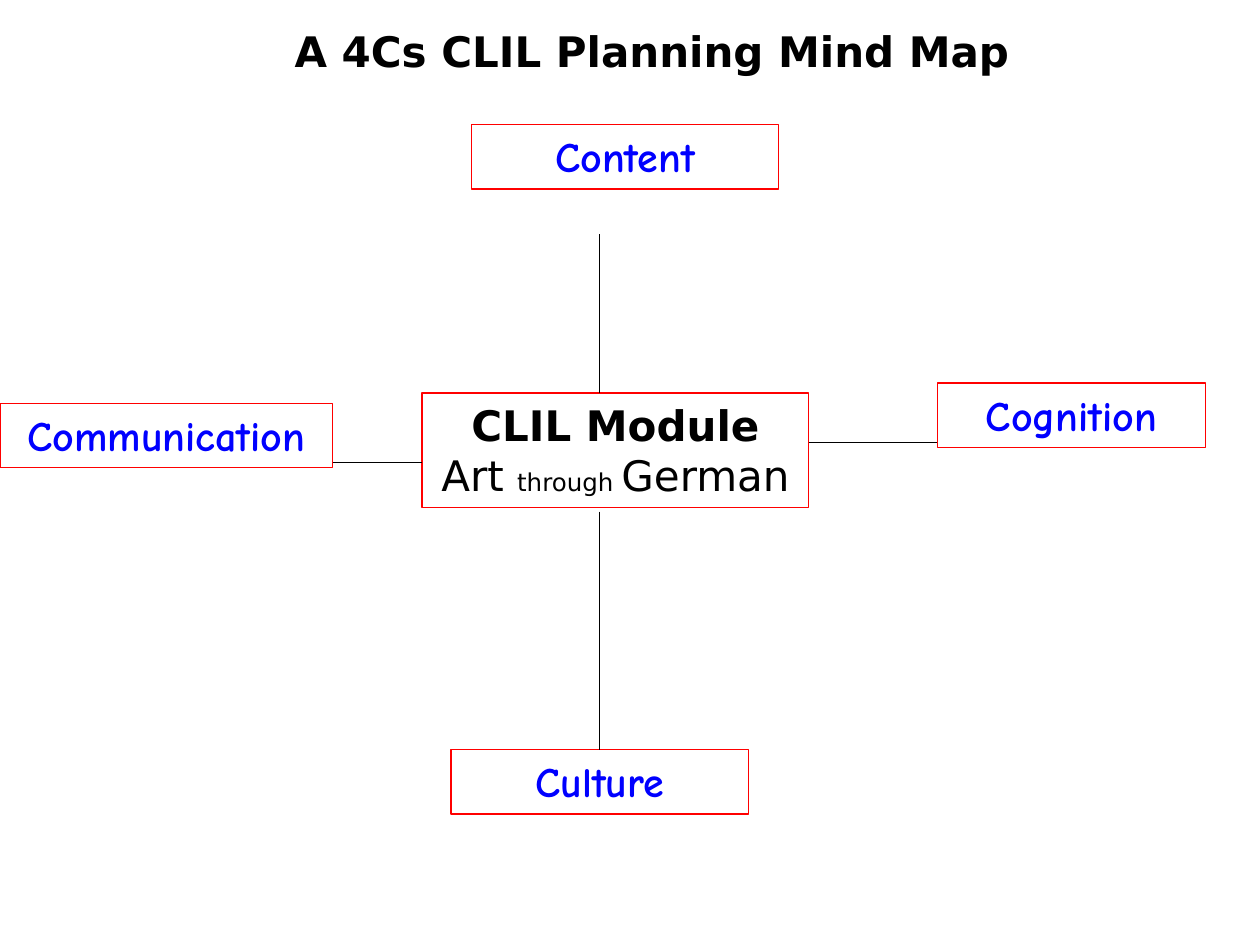
from lxml import etree
from pptx import Presentation
from pptx.dml.color import RGBColor
from pptx.enum import shapes, text
from pptx.oxml.ns import qn
from pptx.util import Inches, Pt

# Content: runs are (words, size, bold)
TITLE = [[("A 4Cs CLIL Planning Mind Map", 24, True)]]
MODULE = [
    [("CLIL Module", 24, True)],
    [("Art ", 24, False), ("through ", 14, False), ("German", 24, False)],
]
# Each C: left, top, width
TOPICS = {
    "Content": (3.74, 0.99, 2.44),
    "Communication": (0, 3.2, 2.64),
    "Culture": (3.58, 5.95, 2.36),
    "Cognition": (7.44, 3.04, 2.13),
}
TOPIC_HEIGHT = 0.51
MODULE_BOX = (3.35, 3.12, 3.07, 0.91)
TITLE_BOX = (2.24, 0.15, 6.3, 0.5)
BLACK, RED, BLUE = "000000", "FF0000", "0000FF"


def colour(value):
    return RGBColor.from_string(value)


def write(shape, lines, font, ink, align):
    frame = shape.text_frame
    frame.word_wrap = True
    frame.vertical_anchor = text.MSO_ANCHOR.TOP
    frame.text = "\n".join("" for _ in lines)
    for paragraph, runs in zip(frame.paragraphs, lines):
        paragraph.alignment = align
        for words, size, bold in runs:
            run = paragraph.add_run()
            run.text = words
            run.font.name, run.font.size, run.font.bold = font, Pt(size), bold
            run.font.color.rgb = colour(ink)


def add_box(slide, place, lines, font, ink):
    box = slide.shapes.add_shape(shapes.MSO_SHAPE.RECTANGLE, *map(Inches, place))
    box.shadow.inherit = False
    box.fill.background()
    box.line.color.rgb = colour(RED)
    box.line.width = Pt(0.75)
    write(box, lines, font, ink, text.PP_ALIGN.CENTER)
    return box


def add_branch(slide, *ends):
    branch = slide.shapes.add_connector(
        shapes.MSO_CONNECTOR.STRAIGHT, *map(Inches, ends))
    branch.line.color.rgb = colour(BLACK)
    branch.line.width = Pt(0.75)
    etree.SubElement(branch._element.spPr, qn("a:effectLst"))
    return branch


prs = Presentation()
prs.slide_width, prs.slide_height = Inches(10), Inches(7.5)
slide = prs.slides.add_slide(prs.slide_layouts[6])

# The four Cs around the module
topics = {
    name: add_box(slide, (*place, TOPIC_HEIGHT), [[(name, 24, True)]],
                  "Comic Neue", BLUE)
    for name, place in TOPICS.items()
}
add_box(slide, MODULE_BOX, MODULE, "DejaVu Sans", BLACK)

# Branches: the upright ones share the axis of Culture
left, top, width, height = MODULE_BOX
right = left + width
culture_left, culture_top, culture_width = TOPICS["Culture"]
axis = culture_left + culture_width / 2
communication_right = TOPICS["Communication"][0] + TOPICS["Communication"][2]
add_branch(slide, axis, top, axis, 1.86)
add_branch(slide, right, 3.51, TOPICS["Cognition"][0], 3.51)
add_branch(slide, communication_right, 3.67, left, 3.67)
to_culture = add_branch(slide, axis, 4.06, axis, culture_top)
to_culture.end_connect(topics["Culture"], 0)

# Title
title = slide.shapes.add_textbox(*map(Inches, TITLE_BOX))
write(title, TITLE, "DejaVu Sans", BLACK, text.PP_ALIGN.LEFT)

prs.save("out.pptx")
